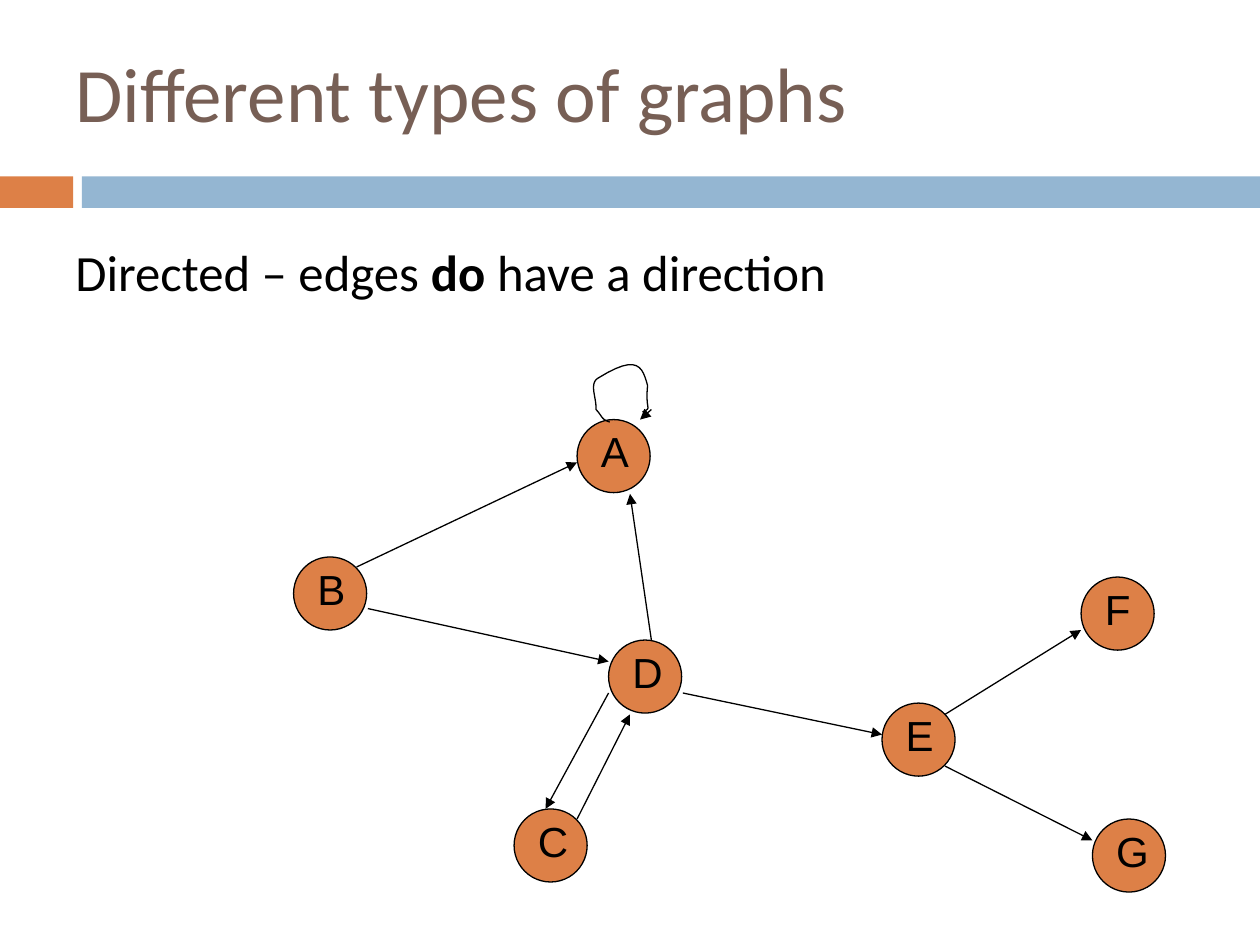
from lxml import etree
from pptx import Presentation
from pptx.dml.color import RGBColor
from pptx.enum.shapes import MSO_CONNECTOR as Connector, MSO_SHAPE as Shape
from pptx.enum.text import MSO_ANCHOR as Anchor, MSO_AUTO_SIZE as AutoSize, PP_ALIGN as Align
from pptx.oxml.ns import qn
from pptx.util import Inches, Pt

COLORS = {"orange": "DD8047", "blue": "94B6D2", "brown": "775F55", "black": "000000"}
TITLE = "Different types of graphs"
STATEMENT = [("Directed – edges ", False), ("do", True), (" have a direction", False)]
BARS = [(0, 0.58, "orange"), (0.65, 9.35, "blue")]  # left, width, colour

NODE_SIZE, LABEL_SIZE, LABEL_SHIFT = 0.58, 0.5, 0.09
NODES = {  # left, top
    "A": (4.58, 3.33), "B": (2.33, 4.42), "C": (4.08, 6.42), "E": (7, 5.58),
    "D": (4.83, 5.08), "F": (8.58, 4.58), "G": (8.67, 6.5),
}
EDGES = [  # start, end
    ((2.83, 4.5), (4.58, 3.67)),    # B to A
    ((2.92, 4.83), (4.83, 5.25)),   # B to D
    ((5.17, 5.08), (5, 3.92)),      # D to A
    ((4.58, 6.5), (5, 5.67)),       # C to D
    ((5.42, 5.5), (7, 5.83)),       # D to E
    ((7.5, 5.67), (8.58, 5)),       # E to F
    ((7.5, 6.08), (8.67, 6.67)),    # E to G
    ((4.83, 5.5), (4.33, 6.42)),    # D to C
    ((5.17, 3.25), (5.08, 3.33)),   # end of the loop at A
]
LOOP_START = (4.84, 3.35)
LOOP_CURVES = [  # two control points and an end point each
    ((4.77, 3.33), (4.78, 3.3), (4.73, 3.25)),
    ((4.74, 3.17), (4.67, 3.04), (4.75, 3)),
    ((5.07, 2.8), (5.1, 2.92), (5.14, 3.06)),
    ((5.12, 3.27), (5.18, 3.23), (5.1, 3.27)),
]
CURVE_STEPS = 12


def rgb(name):
    return RGBColor.from_string(COLORS[name])


def set_font(paragraph, family, size, color):
    font = paragraph.font
    font.name, font.size, font.color.rgb = family, Pt(size), rgb(color)


def outline(item):
    item.line.color.rgb = rgb("black")
    item.line.width = Pt(0.75)


def add_filled(shapes, preset, left, top, width, height, color):
    filled = shapes.add_shape(preset, *map(Inches, (left, top, width, height)))
    filled.shadow.inherit = False
    filled.fill.solid()
    filled.fill.fore_color.rgb = rgb(color)
    return filled


def add_node(slide, letter, left, top):
    shapes = slide.shapes.add_group_shape().shapes
    outline(add_filled(shapes, Shape.OVAL, left, top, NODE_SIZE, NODE_SIZE, "orange"))
    label = shapes.add_textbox(Inches(left + LABEL_SHIFT), Inches(top),
                               Inches(LABEL_SIZE), Inches(LABEL_SIZE)).text_frame
    label.word_wrap = True
    label.auto_size = AutoSize.SHAPE_TO_FIT_TEXT
    paragraph = label.paragraphs[0]
    paragraph.text = letter
    set_font(paragraph, "Arial", 24, "black")
    # Spacing before, as a share of the line height
    before = etree.Element(qn("a:spcBef"))
    etree.SubElement(before, qn("a:spcPct"), val="50000")
    paragraph._p.get_or_add_pPr().insert(0, before)


def add_edge(slide, start, end):
    edge = slide.shapes.add_connector(Connector.STRAIGHT, *map(Inches, start + end))
    outline(edge)
    etree.SubElement(edge.line._get_or_add_ln(), qn("a:tailEnd"), type="triangle")
    etree.SubElement(edge._element.spPr, qn("a:effectLst"))


def curve_points(start, curves):
    """Return points, as lengths, along a chain of cubic Bezier curves."""
    points = []
    for first, second, end in curves:
        corners = (start, first, second, end)
        for step in range(1, CURVE_STEPS + 1):
            t = step / CURVE_STEPS
            weights = ((1 - t) ** 3, 3 * t * (1 - t) ** 2, 3 * t * t * (1 - t), t ** 3)
            points.append(tuple(Inches(sum(w * corner[axis] for w, corner in zip(weights, corners)))
                                for axis in (0, 1)))
        start = end
    return points


def add_loop(slide):
    # The builder rounds coordinates to whole numbers, so it is given EMU
    builder = slide.shapes.build_freeform(*map(Inches, LOOP_START))
    builder.add_line_segments(curve_points(LOOP_START, LOOP_CURVES), close=False)
    loop = builder.convert_to_shape()
    loop.shadow.inherit = False
    loop.fill.background()
    outline(loop)


def add_title(slide):
    title = slide.shapes.title
    title.left, title.top, title.width, title.height = map(Inches, (0.5, 0.13, 8.25, 1.2))
    frame = title.text_frame
    frame.text = TITLE
    frame.auto_size = AutoSize.NONE
    frame.vertical_anchor = Anchor.MIDDLE
    frame.paragraphs[0].alignment = Align.LEFT
    set_font(frame.paragraphs[0], "Calibri", 44, "brown")


def add_statement(slide):
    frame = slide.shapes.add_textbox(*map(Inches, (0.5, 1.86, 9, 0.83))).text_frame
    frame.word_wrap = True
    paragraph = frame.paragraphs[0]
    paragraph.space_before = Pt(7)
    set_font(paragraph, "Calibri", 29, "black")
    for words, bold in STATEMENT:
        run = paragraph.add_run()
        run.text, run.font.bold = words, bold


def main():
    deck = Presentation()
    deck.slide_width, deck.slide_height = Inches(10), Inches(7.5)
    slide = deck.slides.add_slide(deck.slide_layouts[5])
    for left, width, color in BARS:
        add_filled(slide.shapes, Shape.RECTANGLE, left, 1.4, width, 0.25, color).line.fill.background()
    add_title(slide)
    add_statement(slide)
    for letter, (left, top) in NODES.items():
        add_node(slide, letter, left, top)
    add_loop(slide)
    for start, end in EDGES:
        add_edge(slide, start, end)
    deck.save("out.pptx")


if __name__ == "__main__":
    main()
